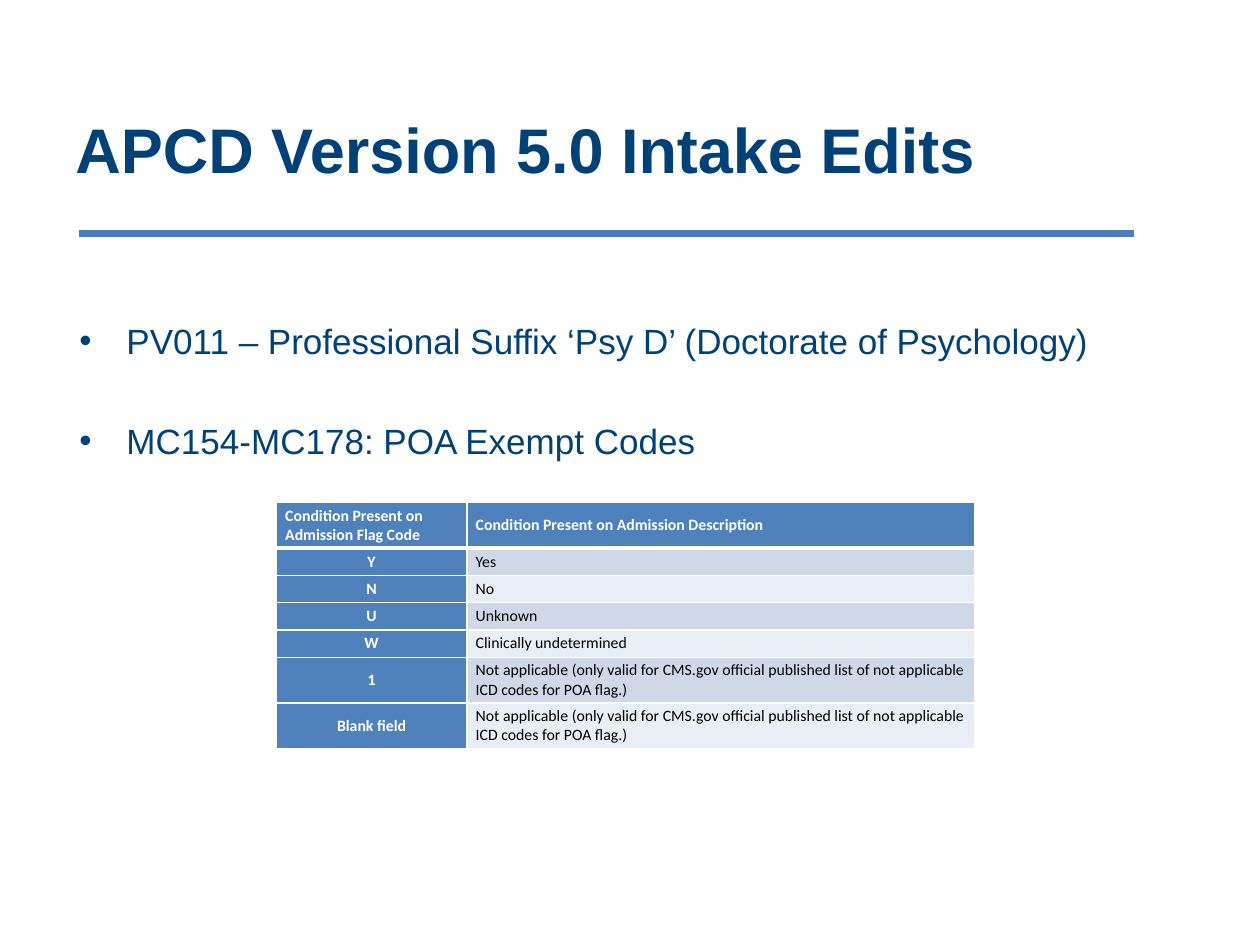
from lxml.etree import SubElement
from pptx import Presentation
from pptx.dml.color import RGBColor
from pptx.enum.shapes import MSO_CONNECTOR
from pptx.enum.text import MSO_ANCHOR, PP_ALIGN
from pptx.oxml.ns import qn
from pptx.util import Cm, Pt

COLORS = {
    "navy": "004178",
    "rule": "4B7EBC",
    "header": "4F81BD",
    "odd": "D0D8E8",
    "even": "E9EDF4",
    "white": "FFFFFF",
    "black": "000000",
}
TITLE = "APCD Version 5.0 Intake Edits"
EDITS = [
    "PV011 – Professional Suffix ‘Psy D’ (Doctorate of Psychology)",
    "MC154-MC178: POA Exempt Codes",
]
NOT_APPLICABLE = (
    "Not applicable (only valid for CMS.gov official published list "
    "of not applicable ICD codes for POA flag.)"
)
FLAG_CODES = [
    ("Condition Present on Admission Flag Code", "Condition Present on Admission Description"),
    ("Y", "Yes"),
    ("N", "No"),
    ("U", "Unknown"),
    ("W", "Clinically undetermined"),
    ("1", NOT_APPLICABLE),
    ("Blank field", NOT_APPLICABLE),
]


def rgb(name):
    """Return the named colour."""
    return RGBColor.from_string(COLORS[name])


def style(paragraph, typeface, size, color, bold=False):
    """Set the font of a whole paragraph."""
    font = paragraph.font
    font.name, font.size, font.bold = typeface, Pt(size), bold
    font.color.rgb = rgb(color)


def add_heading(slide, left, top, width, height):
    """Place the title and the rule beneath it."""
    heading = slide.shapes.add_textbox(left, top, width, height).text_frame
    heading.word_wrap = True
    heading.vertical_anchor = MSO_ANCHOR.MIDDLE
    heading.text = TITLE
    style(heading.paragraphs[0], "Arial", 36, "navy", True)
    rule_left, rule_top = left + Cm(0.33), top + height + Cm(0.3)
    rule = slide.shapes.add_connector(
        MSO_CONNECTOR.STRAIGHT, rule_left, rule_top, rule_left + Cm(21.26), rule_top
    )
    rule.line.color.rgb = rgb("rule")
    rule.line.width = Pt(4)
    SubElement(rule._element.spPr, qn("a:effectLst"))


def add_edits(slide, left, top, width, height):
    """Place the bulleted list of edits."""
    edits = slide.shapes.add_textbox(left, top, width, height).text_frame
    edits.word_wrap = True
    for index, edit in enumerate(EDITS):
        paragraph = edits.add_paragraph() if index else edits.paragraphs[0]
        paragraph.text = edit
        properties = paragraph._p.get_or_add_pPr()
        properties.set("marL", str(Cm(0.95)))
        properties.set("indent", str(-Cm(0.95)))
        SubElement(properties, qn("a:buFont"), typeface="Arial")
        SubElement(properties, qn("a:buChar"), char="•")
        if index:
            paragraph.space_before = Pt(33)
        style(paragraph, "Arial", 20, "navy")


def add_borders(cell, bottom_width):
    """Draw white borders around a cell."""
    properties = cell._tc.get_or_add_tcPr()
    widths = {"a:lnL": 1, "a:lnR": 1, "a:lnT": 1, "a:lnB": bottom_width}
    for position, (side, points) in enumerate(widths.items()):
        border = SubElement(properties, qn(side), w=str(Pt(points)))
        fill = SubElement(border, qn("a:solidFill"))
        SubElement(fill, qn("a:srgbClr"), val=COLORS["white"])
        properties.insert(position, border)


def add_flag_codes(slide, left, top, width, height):
    """Place the table of admission flag codes."""
    flags = slide.shapes.add_table(len(FLAG_CODES), 2, left, top, width, height).table
    flags.columns[0].width = Cm(3.84)
    flags.columns[1].width = width - Cm(3.84)
    for row, entry in enumerate(FLAG_CODES):
        tall = row == 0 or entry[1] == NOT_APPLICABLE
        flags.rows[row].height = Cm(0.92 if tall else 0.55)
        for column, wording in enumerate(entry):
            cell = flags.cell(row, column)
            heading = row == 0 or column == 0
            band = "odd" if row % 2 else "even"
            cell.fill.solid()
            cell.fill.fore_color.rgb = rgb("header" if heading else band)
            cell.margin_left = cell.margin_right = Cm(0.18)
            cell.margin_top = cell.margin_bottom = 0
            cell.vertical_anchor = MSO_ANCHOR.MIDDLE
            cell.text = wording
            paragraph = cell.text_frame.paragraphs[0]
            if row and column == 0:
                paragraph.alignment = PP_ALIGN.CENTER
            style(paragraph, "Calibri", 9, "white" if heading else "black", heading)
            add_borders(cell, 1 if row else 3)


def main():
    """Build and save the slide."""
    deck = Presentation()
    deck.slide_width, deck.slide_height = Cm(25.4), Cm(19.05)
    slide = deck.slides.add_slide(deck.slide_layouts[6])
    add_heading(slide, Cm(1.27), Cm(1.57), Cm(21.59), Cm(2.83))
    add_edits(slide, Cm(1.35), Cm(6.32), Cm(21.56), Cm(3.5))
    add_flag_codes(slide, Cm(5.57), Cm(10.13), Cm(14.08), Cm(4.96))
    deck.save("out.pptx")


if __name__ == "__main__":
    main()
